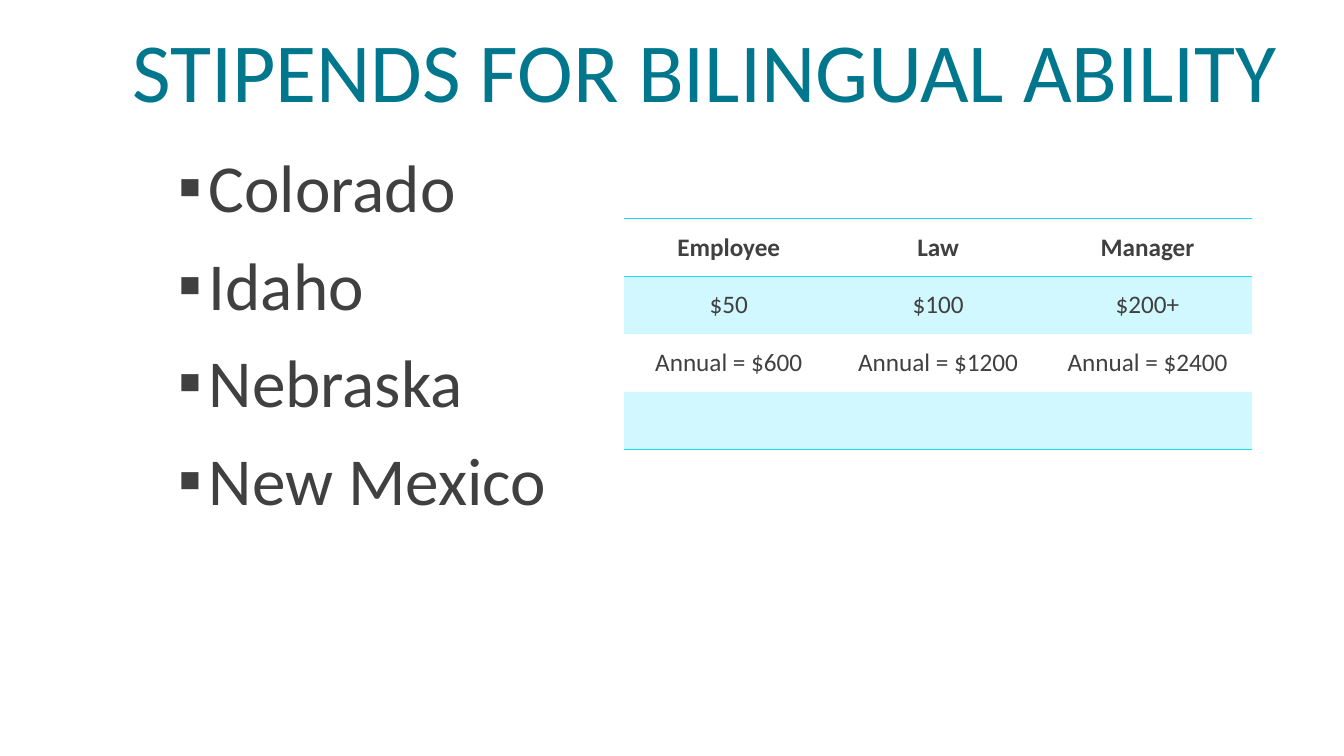
from lxml import etree
from pptx import Presentation
from pptx import util as u
from pptx.dml.color import RGBColor
from pptx.enum import text
from pptx.oxml.ns import qn

FONT = "Calibri"
TEAL, GREY, CYAN = "00778D", "404040", "1BDCFF"
PLAIN_TABLE_STYLE = "{2D5ABB26-0587-4C30-8999-92F81FD0307C}"
STATES = ["Colorado", "Idaho", "Nebraska", "New Mexico"]
STIPENDS = [
    ["Employee", "Law", "Manager"],
    ["$50", "$100", "$200+"],
    ["Annual = $600", "Annual = $1200", "Annual = $2400"],
    ["", "", ""],
]


def color(hex_value):
    return RGBColor.from_string(hex_value)


def style_font(font, size, hex_value, bold=False):
    font.name = FONT
    font.size = u.Pt(size)
    font.bold = bold
    font.color.rgb = color(hex_value)


def add_run(paragraph, words, size, hex_value, bold=False):
    run = paragraph.add_run()
    run.text = words
    style_font(run.font, size, hex_value, bold)


def place(shape, box):
    shape.left, shape.top, shape.width, shape.height = map(u.Inches, box)
    shape.text_frame.word_wrap = True
    shape.text_frame.auto_size = text.MSO_AUTO_SIZE.NONE


def fill_title(shape, box, words):
    place(shape, box)
    frame = shape.text_frame
    frame.vertical_anchor = text.MSO_ANCHOR.BOTTOM
    frame.margin_bottom = 0
    paragraph = frame.paragraphs[0]
    paragraph.alignment = text.PP_ALIGN.LEFT
    paragraph.line_spacing = 0.85
    add_run(paragraph, words, 60, TEAL)


def add_bullet(paragraph, indent):
    properties = paragraph._p.get_or_add_pPr()
    properties.set("marL", str(u.Inches(indent)))
    properties.set("indent", str(-u.Inches(indent)))
    etree.SubElement(properties, qn("a:buFont"), typeface=FONT)
    etree.SubElement(properties, qn("a:buChar"), char="▪")


def fill_list(shape, box, items):
    place(shape, box)
    frame = shape.text_frame
    frame.vertical_anchor = text.MSO_ANCHOR.TOP
    for index, item in enumerate(items):
        paragraph = frame.add_paragraph() if index else frame.paragraphs[0]
        add_bullet(paragraph, 0.3)
        paragraph.line_spacing = 0.9
        paragraph.space_before = u.Pt(18 if index else 0)
        add_run(paragraph, item, 48, GREY)


def add_border(cell, side):
    line = etree.Element(qn("a:" + side), w=str(u.Pt(1)))
    fill = etree.SubElement(line, qn("a:solidFill"))
    etree.SubElement(fill, qn("a:srgbClr"), val=CYAN)
    return line


def format_cell(cell, words, header, banded, sides):
    # Fill, with a light tint on banded rows
    if banded:
        cell.fill.solid()
        cell.fill.fore_color.rgb = color(CYAN)
        tint = cell._tc.tcPr.find(".//" + qn("a:srgbClr"))
        etree.SubElement(tint, qn("a:alpha"), val="20000")
    else:
        cell.fill.background()
    # Borders come before the fill
    for position, side in enumerate(sides):
        cell._tc.tcPr.insert(position, add_border(cell, side))
    # Text
    cell.vertical_anchor = text.MSO_ANCHOR.MIDDLE
    paragraph = cell.text_frame.paragraphs[0]
    paragraph.alignment = text.PP_ALIGN.CENTER
    if words:
        add_run(paragraph, words, 18, GREY, header)
    else:
        style_font(paragraph.font, 18, GREY)


def add_stipend_table(slide, box, rows):
    frame = slide.shapes.add_table(len(rows), len(rows[0]), *map(u.Inches, box))
    table = frame.table
    table._tbl.tblPr.find(qn("a:tableStyleId")).text = PLAIN_TABLE_STYLE
    last = len(rows) - 1
    for row, values in enumerate(rows):
        sides = {0: ["lnT", "lnB"], last: ["lnB"]}.get(row, [])
        for column, words in enumerate(values):
            format_cell(table.cell(row, column), words, row == 0, row % 2 == 1, sides)


def build_slide(presentation):
    slide = presentation.slides.add_slide(presentation.slide_layouts[1])
    fill_title(slide.shapes.title, (1.21, 0, 11.95, 1.19),
               "STIPENDS FOR BILINGUAL ABILITY")
    fill_list(slide.placeholders[1], (1.67, 1.48, 5, 3.92), STATES)
    add_stipend_table(slide, (6.19, 2.17, 6.23, 2.29), STIPENDS)


def main():
    presentation = Presentation()
    presentation.slide_width = u.Inches(13.33)
    presentation.slide_height = u.Inches(7.5)
    build_slide(presentation)
    presentation.save("out.pptx")


if __name__ == "__main__":
    main()
